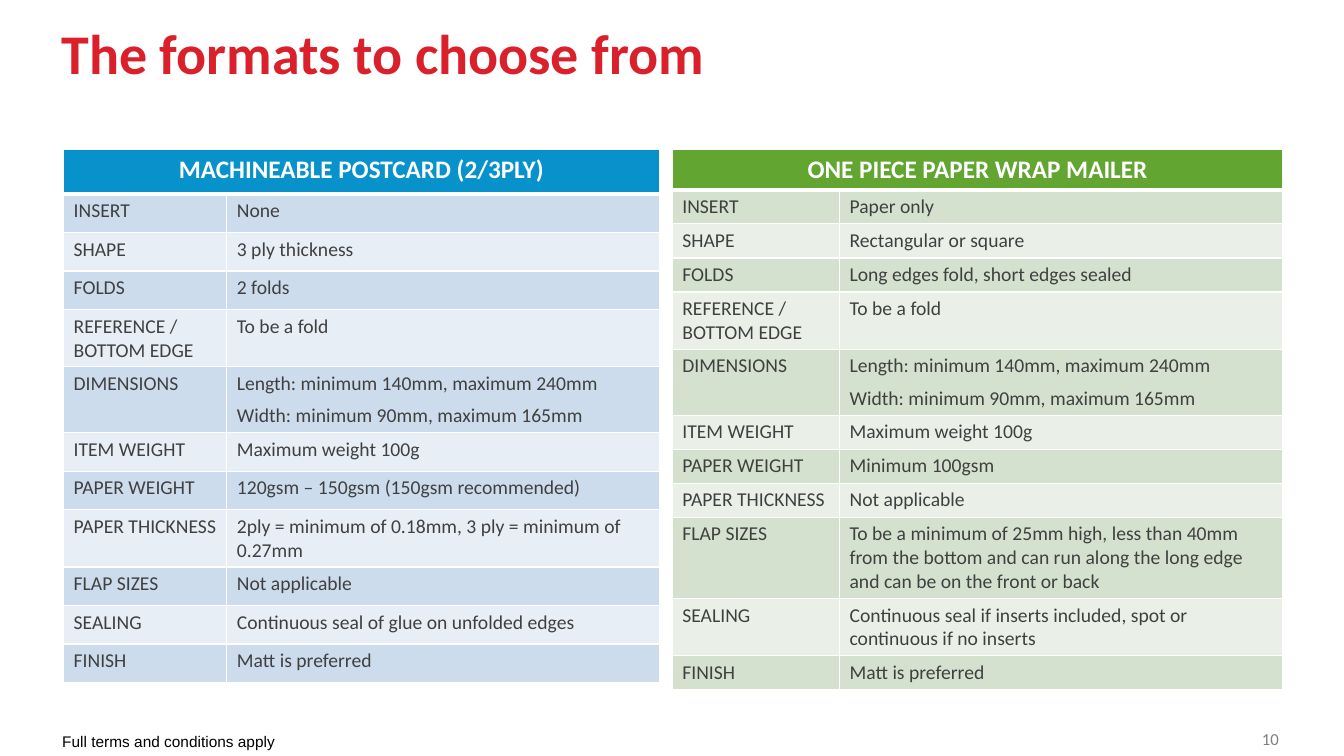
"""Build a slide comparing two mailing formats in side-by-side tables."""
from lxml.etree import SubElement
from pptx import Presentation
from pptx.dml.color import RGBColor
from pptx.enum.text import MSO_ANCHOR, PP_ALIGN
from pptx.oxml import parse_xml
from pptx.oxml.ns import nsdecls, qn
from pptx.util import Pt

COLORS = {
    "title": "DA202A", "number": "808080", "footer": "000000",
    "body": "404040", "white": "FFFFFF",
    "blue": "0892CB", "blue_dark": "CCDCEC", "blue_light": "E7EEF6",
    "green": "62A531", "green_dark": "D3E1CE", "green_light": "EAF0E8",
}
SIZE_LIMITS = "Length: minimum 140mm, maximum 240mm\nWidth: minimum 90mm, maximum 165mm"
LABELS = ["INSERT", "SHAPE", "FOLDS", "REFERENCE / BOTTOM EDGE", "DIMENSIONS",
          "ITEM WEIGHT", "PAPER WEIGHT", "PAPER THICKNESS", "FLAP SIZES",
          "SEALING", "FINISH"]
FORMATS = [
    {
        "heading": "ONE PIECE PAPER WRAP MAILER", "hue": "green",
        "left": 480.2, "columns": [119.5, 316.8], "heading_height": 28.4,
        "row_height": 24.3,
        "tall_rows": {"REFERENCE / BOTTOM EDGE": 41, "DIMENSIONS": 47,
                      "FLAP SIZES": 58, "SEALING": 41},
        "spaced": ["DIMENSIONS"],
        "values": ["Paper only", "Rectangular or square",
                   "Long edges fold, short edges sealed", "To be a fold",
                   SIZE_LIMITS, "Maximum weight 100g", "Minimum 100gsm",
                   "Not applicable",
                   "To be a minimum of 25mm high, less than 40mm from the bottom "
                   "and can run along the long edge and can be on the front or back",
                   "Continuous seal if inserts included, spot or continuous "
                   "if no inserts",
                   "Matt is preferred"],
    },
    {
        "heading": "MACHINEABLE POSTCARD (2/3PLY)", "hue": "blue",
        "left": 45.4, "columns": [116.6, 308.9], "heading_height": 31.8,
        "row_height": 27.5,
        "tall_rows": {"REFERENCE / BOTTOM EDGE": 41, "DIMENSIONS": 47,
                      "PAPER THICKNESS": 41},
        "spaced": ["DIMENSIONS", "ITEM WEIGHT", "PAPER WEIGHT", "SEALING", "FINISH"],
        "values": ["None", "3 ply thickness", "2 folds", "To be a fold",
                   SIZE_LIMITS, "Maximum weight 100g",
                   "120gsm – 150gsm (150gsm recommended)",
                   "2ply = minimum of 0.18mm, 3 ply = minimum of 0.27mm",
                   "Not applicable", "Continuous seal of glue on unfolded edges",
                   "Matt is preferred"],
    },
]


def style_text(frame, size, color, bold=False, font="Calibri"):
    for paragraph in frame.paragraphs:
        for run in paragraph.runs:
            run.font.name = font
            run.font.size = Pt(size)
            run.font.bold = bold
            run.font.color.rgb = RGBColor.from_string(COLORS[color])


def style_cell(cell, fill, bottom_width=1):
    cell.fill.solid()
    cell.fill.fore_color.rgb = RGBColor.from_string(COLORS[fill])
    properties = cell._tc.get_or_add_tcPr()
    for position, side in enumerate("LRTB"):
        width = Pt(bottom_width if side == "B" else 1)
        border = parse_xml(f'<a:ln{side} {nsdecls("a")} w="{width}"/>')
        color_fill = SubElement(border, qn("a:solidFill"))
        SubElement(color_fill, qn("a:srgbClr"), val=COLORS["white"])
        properties.insert(position, border)


deck = Presentation()
deck.slide_width, deck.slide_height = Pt(960), Pt(540)
slide = deck.slides.add_slide(deck.slide_layouts[6])

for text, box, margins, wrap, size, color, bold, font in [
    ("The formats to choose from", (43.9, 22.3, 872, 77.8), (0, 0), True,
     40, "title", True, "Calibri"),
    ("10", (901.4, 520.6, 50, 18.7), (0, 0), True, 12, "number", False, "Calibri"),
    ("Full terms and conditions apply", (37.4, 519.1, 167.8, 20.6), (7.2, 3.6),
     False, 11, "footer", False, "Arial"),
]:
    frame = slide.shapes.add_textbox(*map(Pt, box)).text_frame
    frame.margin_left = frame.margin_right = Pt(margins[0])
    frame.margin_top = frame.margin_bottom = Pt(margins[1])
    frame.word_wrap = wrap
    frame.vertical_anchor = MSO_ANCHOR.TOP
    frame.text = text
    if color == "title":
        frame.paragraphs[0].line_spacing = 0.8
    style_text(frame, size, color, bold, font)

for mailing in FORMATS:
    heights = [mailing["heading_height"]] + [
        mailing["tall_rows"].get(label, mailing["row_height"]) for label in LABELS]
    table = slide.shapes.add_table(
        len(heights), 2, Pt(mailing["left"]), Pt(106.8),
        Pt(sum(mailing["columns"])), Pt(sum(heights))).table
    for column, width in zip(table.columns, mailing["columns"]):
        column.width = Pt(width)
    for row, height in zip(table.rows, heights):
        row.height = Pt(height)

    heading = table.cell(0, 0)
    heading.merge(table.cell(0, 1))
    heading.text_frame.text = mailing["heading"]
    heading.text_frame.paragraphs[0].alignment = PP_ALIGN.CENTER
    style_text(heading.text_frame, 18, "white", bold=True)
    for cell in table.rows[0].cells:
        style_cell(cell, mailing["hue"], bottom_width=3)

    for index, (label, value) in enumerate(zip(LABELS, mailing["values"]), start=1):
        shade = "dark" if index % 2 else "light"
        for cell, text in zip(table.rows[index].cells, (label, value)):
            cell.text_frame.text = text
            style_text(cell.text_frame, 14, "body")
            style_cell(cell, f"{mailing['hue']}_{shade}")
        if label in mailing["spaced"]:
            for paragraph in table.cell(index, 1).text_frame.paragraphs:
                paragraph.space_after = Pt(6)

deck.save("out.pptx")
